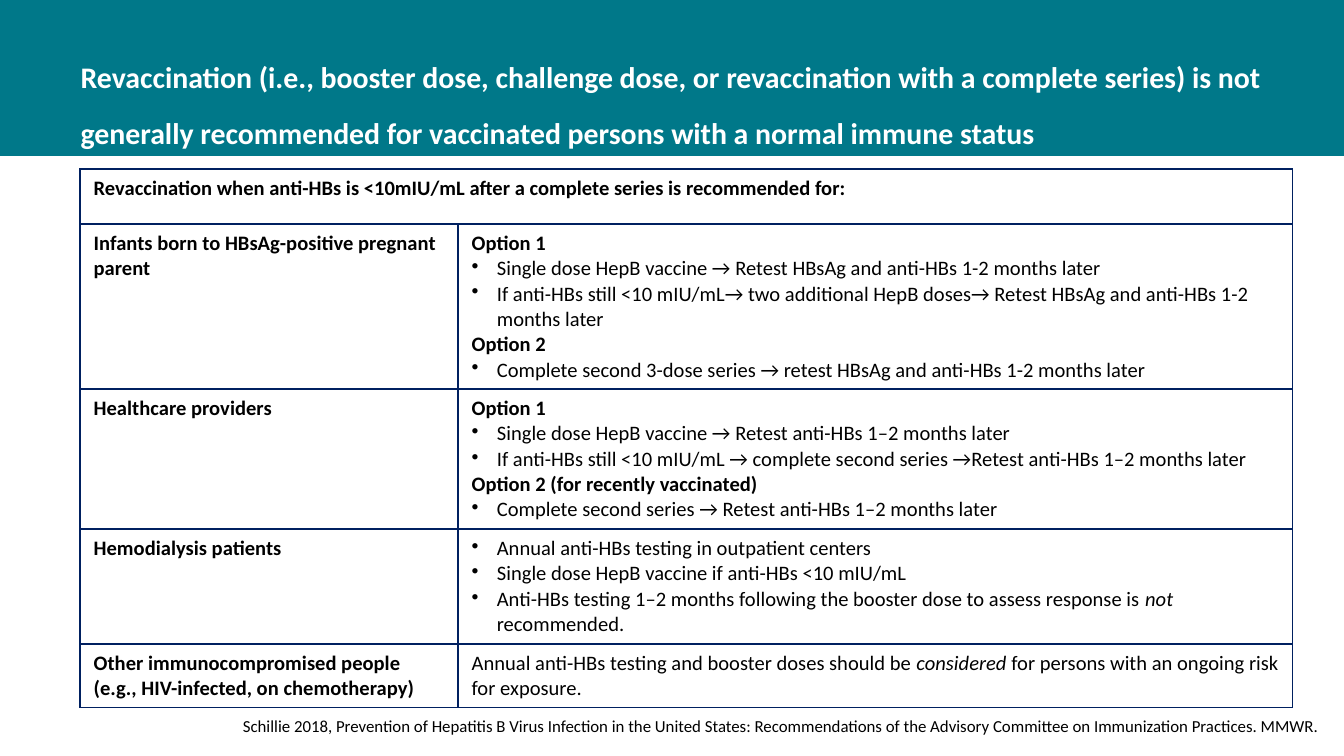
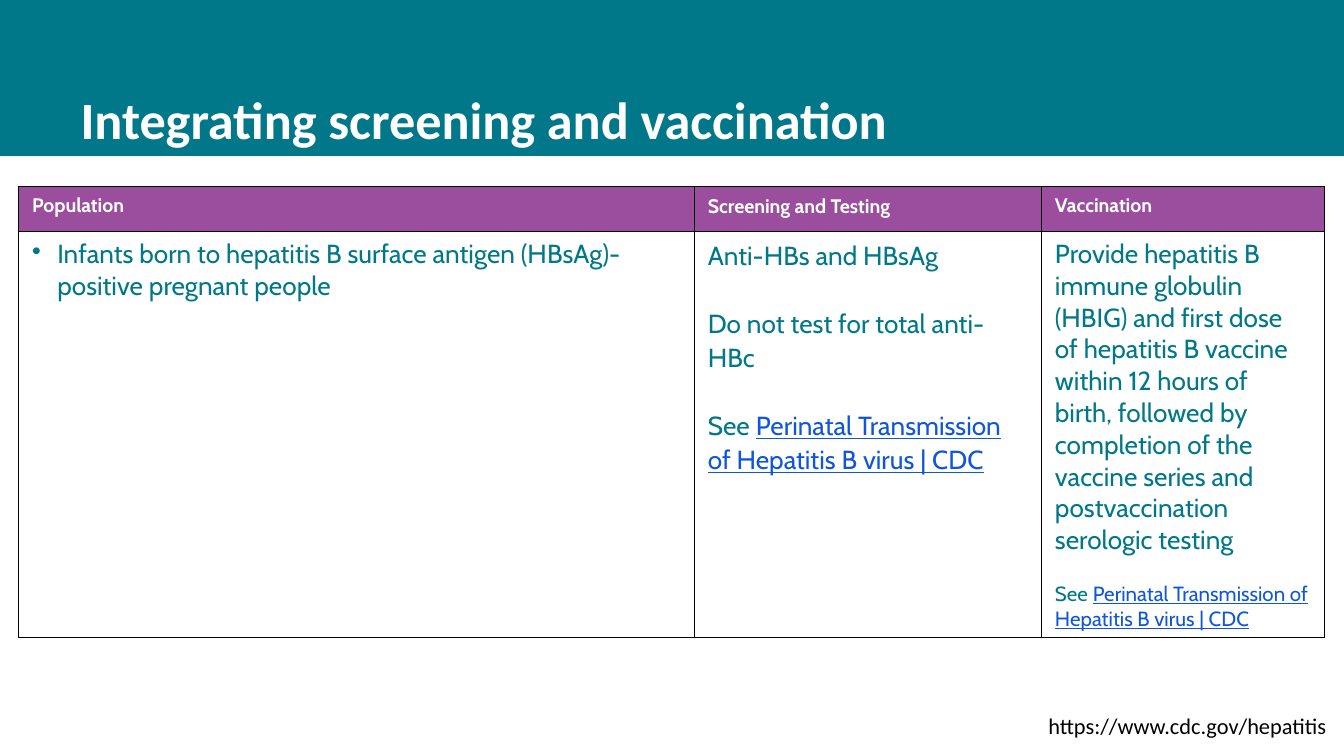
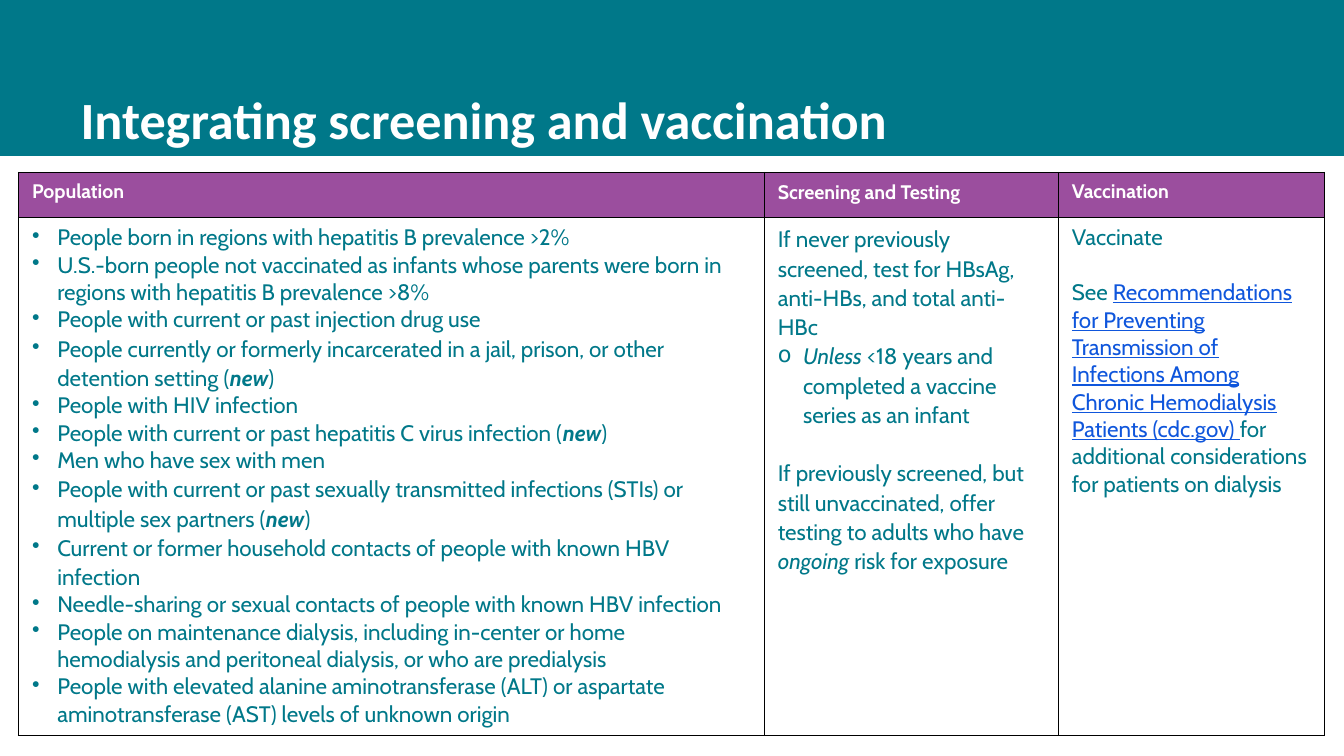
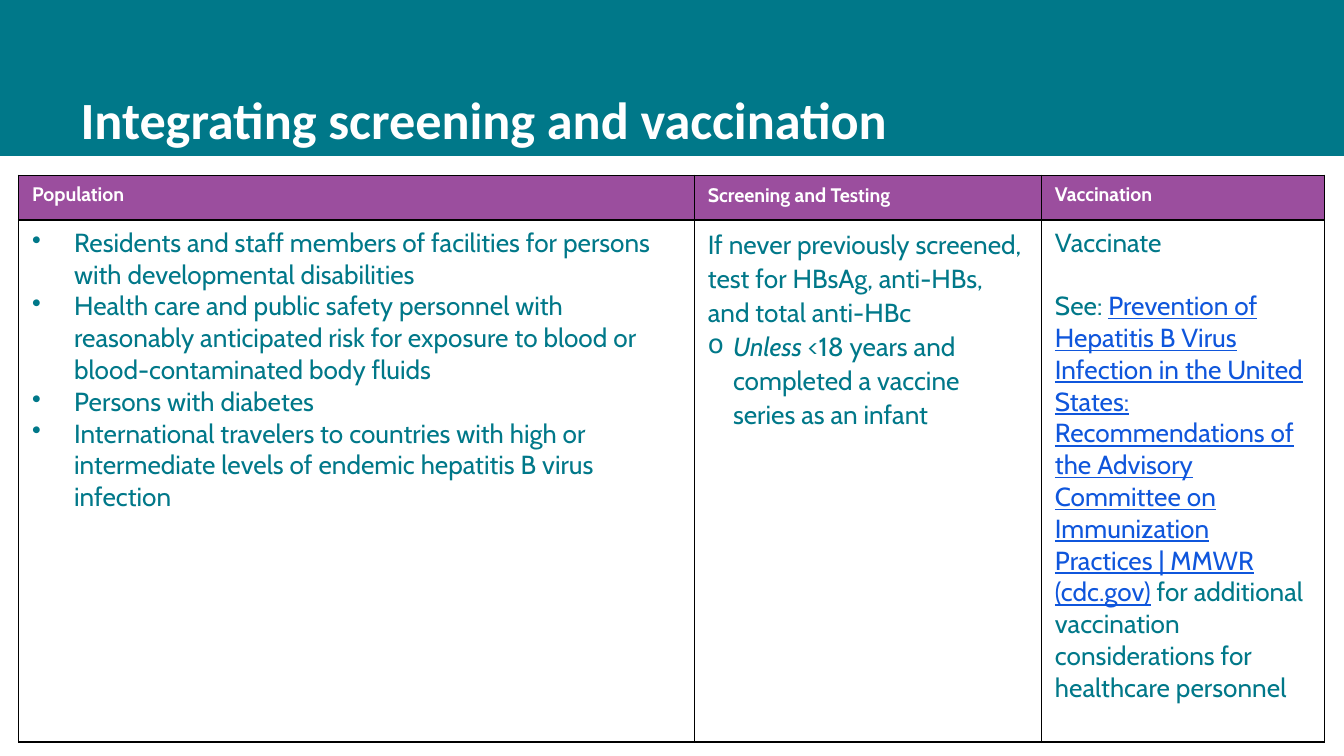
"""Build four slides on hepatitis B revaccination, screening and vaccination."""
import collections

import pptx
import pptx.dml.color
import pptx.enum.shapes
import pptx.enum.text
import pptx.oxml
import pptx.oxml.ns
import pptx.util

Pt = pptx.util.Pt
RGBColor = pptx.dml.color.RGBColor

TEAL = RGBColor(0x00, 0x78, 0x89)
PURPLE = RGBColor(0x9B, 0x4E, 0x9E)
NAVY = RGBColor(0x00, 0x20, 0x60)
LINK_BLUE = RGBColor(0x0F, 0x56, 0xDC)
BLACK = RGBColor(0x00, 0x00, 0x00)
WHITE = RGBColor(0xFF, 0xFF, 0xFF)
NAMESPACE = pptx.oxml.ns.nsdecls("a")
LOOSE = 1.07

Para = collections.namedtuple(
    "Para", "runs bullet spacing gap size indent", defaults=("", None, 0, None, 13.5))


def fill_cell(cell, paras, font, size, color, border, fill=None, bold=False):
    """Write paragraphs into a cell; run styles are b(old), i(talic) and u (link)."""
    properties = cell._tc.get_or_add_tcPr()
    for side in "LRTB":
        properties.append(pptx.oxml.parse_xml(
            f'<a:ln{side} {NAMESPACE} w="12700"><a:solidFill><a:srgbClr val="{border}"/>'
            f'</a:solidFill></a:ln{side}>'))
    if fill is None:
        cell.fill.background()
    else:
        cell.fill.solid()
        cell.fill.fore_color.rgb = fill
    for index, para in enumerate(paras):
        frame = cell.text_frame
        paragraph = frame.paragraphs[0] if index == 0 else frame.add_paragraph()
        if para.bullet:
            layout = paragraph._p.get_or_add_pPr()
            layout.set("marL", str(Pt(para.indent)))
            layout.set("indent", str(-Pt(para.indent)))
            layout.append(pptx.oxml.parse_xml(
                f'<a:buChar {NAMESPACE} char="{para.bullet}"/>'))
        if para.spacing:
            paragraph.line_spacing = para.spacing
        if para.gap:
            paragraph.space_before = Pt(para.gap)
        for piece in para.runs:
            words, style = (piece, "") if isinstance(piece, str) else piece
            run = paragraph.add_run()
            run.text = words
            run.font.name = font
            run.font.size = Pt(para.size or size)
            run.font.bold = bold or "b" in style
            run.font.italic = "i" in style
            run.font.underline = "u" in style
            run.font.color.rgb = LINK_BLUE if "u" in style else color


def add_grid(slide, left, top, widths, heights):
    """Add a plain table with the given column widths and row heights."""
    grid = slide.shapes.add_table(
        len(heights), len(widths), Pt(left), Pt(top), Pt(sum(widths)), Pt(sum(heights))).table
    grid.first_row = grid.horz_banding = False
    for column, width in zip(grid.columns, widths):
        column.width = Pt(width)
    for row, height in zip(grid.rows, heights):
        row.height = Pt(height)
    return grid


deck = pptx.Presentation()
deck.slide_width, deck.slide_height = Pt(720), Pt(405)

INTEGRATING = "Integrating screening and vaccination"
titles = [
    ("Revaccination (i.e., booster dose, challenge dose, or revaccination with a complete series) "
     "is not generally recommended for vaccinated persons with a normal immune status", 16),
    (INTEGRATING, 28), (INTEGRATING, 28), (INTEGRATING, 28),
]
for heading, size in titles:
    slide = deck.slides.add_slide(deck.slide_layouts[5])
    band = slide.shapes.add_shape(
        pptx.enum.shapes.MSO_SHAPE.RECTANGLE, 0, 0, deck.slide_width, Pt(83.5))
    band.shadow.inherit = False
    band.fill.solid()
    band.fill.fore_color.rgb = TEAL
    band.line.fill.background()
    slide.shapes._spTree.insert(2, band._element)
    title = slide.shapes.title
    title.left, title.top, title.width, title.height = Pt(36), Pt(16.5), Pt(648), Pt(67.5)
    title.text_frame.text = heading
    title.text_frame.auto_size = pptx.enum.text.MSO_AUTO_SIZE.NONE
    title.text_frame.vertical_anchor = pptx.enum.text.MSO_ANCHOR.BOTTOM
    paragraph = title.text_frame.paragraphs[0]
    paragraph.alignment = pptx.enum.text.PP_ALIGN.LEFT
    paragraph.line_spacing = Pt(30)
    font = paragraph.runs[0].font
    font.name, font.size, font.bold = "Calibri", Pt(size), True
    font.color.rgb = WHITE

sources = [
    (0, "Schillie 2018, Prevention of Hepatitis B Virus Infection in the United States: "
        "Recommendations of the Advisory Committee on Immunization Practices. MMWR.",
     9, 123, 380, 597, 18),
    (1, "https://www.cdc.gov/hepatitis", 12, 554.5, 378, 165.5, 21.5),
]
for number, words, size, left, top, width, height in sources:
    source = deck.slides[number].shapes.add_textbox(Pt(left), Pt(top), Pt(width), Pt(height))
    source.text_frame.word_wrap = True
    source.text_frame.text = words
    font = source.text_frame.paragraphs[0].runs[0].font
    font.name, font.size = "Calibri", Pt(size)
    font.color.rgb = BLACK

revaccination = [
    ("Infants born to HBsAg-positive pregnant parent", [
        Para([("Option 1", "b")]),
        Para(["Single dose HepB vaccine → Retest HBsAg and anti-HBs 1-2 months later"], "•"),
        Para(["If anti-HBs still <10 mIU/mL→ two additional HepB doses→ "
              "Retest HBsAg and anti-HBs 1-2 months later"], "•"),
        Para([("Option 2", "b")]),
        Para(["Complete second 3-dose series → retest HBsAg and anti-HBs 1-2 months later"], "•"),
    ]),
    ("Healthcare providers", [
        Para([("Option 1", "b")]),
        Para(["Single dose HepB vaccine → Retest anti-HBs 1–2 months later"], "•"),
        Para(["If anti-HBs still <10 mIU/mL → complete second series →"
              "Retest anti-HBs 1–2 months later"], "•"),
        Para([("Option 2 (for recently vaccinated)", "b")]),
        Para(["Complete second series → Retest anti-HBs 1–2 months later"], "•"),
    ]),
    ("Hemodialysis patients", [
        Para(["Annual anti-HBs testing in outpatient centers"], "•"),
        Para(["Single dose HepB vaccine if anti-HBs <10 mIU/mL"], "•"),
        Para(["Anti-HBs testing 1–2 months following the booster dose to assess response is ",
              ("not", "i"), " recommended."], "•"),
    ]),
    ("Other immunocompromised people (e.g., HIV-infected, on chemotherapy)", [
        Para(["Annual anti-HBs testing and booster doses should be ", ("considered", "i"),
              " for persons with an ongoing risk for exposure."]),
    ]),
]
grid = add_grid(deck.slides[0], 43, 90.5, [202.5, 447], [29.5, 88.5, 75, 61.5, 34])
caption = "Revaccination when anti-HBs is <10mIU/mL after a complete series is recommended for:"
fill_cell(grid.cell(0, 0), [Para([caption])], "Calibri", 11, BLACK, NAVY, bold=True)
fill_cell(grid.cell(0, 1), [], "Calibri", 11, BLACK, NAVY)
grid.cell(0, 0).merge(grid.cell(0, 1))
for row, (group, advice) in enumerate(revaccination, start=1):
    fill_cell(grid.cell(row, 0), [Para([group])], "Calibri", 11, BLACK, NAVY, bold=True)
    fill_cell(grid.cell(row, 1), advice, "Calibri", 11, BLACK, NAVY)

never_screened = [
    Para(["If never previously screened, test for HBsAg, anti-HBs, and total anti-HBc"],
         spacing=LOOSE),
    Para([("Unless", "i"), " <18 years and completed a vaccine series as an infant"],
         "o", LOOSE),
]
perinatal = ["See ", ("Perinatal Transmission of Hepatitis B virus | CDC", "u")]
infants = [
    [Para(["Infants born to hepatitis B surface antigen (HBsAg)-positive pregnant people"], "•")],
    [Para(["Anti-HBs and HBsAg"], spacing=LOOSE),
     Para(["Do not test for total anti-HBc"], spacing=LOOSE, gap=18.25),
     Para(perinatal, spacing=LOOSE, gap=18.25)],
    [Para(["Provide hepatitis B immune globulin (HBIG) and first dose of hepatitis B vaccine "
           "within 12 hours of birth, followed by completion of the vaccine series and "
           "postvaccination serologic testing"]),
     Para(perinatal, gap=13.4, size=11)],
]
risk_groups = [
    [Para(["People born in regions with hepatitis B prevalence >2%"], "•"),
     Para(["U.S.-born people not vaccinated as infants whose parents were born in regions "
           "with hepatitis B prevalence >8%"], "•"),
     Para(["People with current or past injection drug use"], "•"),
     Para(["People currently or formerly incarcerated in a jail, prison, or other detention "
           "setting (", ("new", "bi"), ")"], "•", LOOSE),
     Para(["People with HIV infection"], "•"),
     Para(["People with current or past hepatitis C virus infection (", ("new", "bi"), ")"], "•"),
     Para(["Men who have sex with men"], "•"),
     Para(["People with current or past sexually transmitted infections (STIs) or multiple "
           "sex partners (", ("new", "bi"), ")"], "•", LOOSE),
     Para(["Current or former household contacts of people with known HBV infection"],
          "•", LOOSE),
     Para(["Needle-sharing or sexual contacts of people with known HBV infection"], "•"),
     Para(["People on maintenance dialysis, including in-center or home hemodialysis and "
           "peritoneal dialysis, or who are predialysis"], "•"),
     Para(["People with elevated alanine aminotransferase (ALT) or aspartate "
           "aminotransferase (AST) levels of unknown origin"], "•")],
    never_screened + [
        Para(["If previously screened, but still unvaccinated, offer testing to adults who have ",
              ("ongoing", "i"), " risk for exposure"], spacing=LOOSE, gap=15.7)],
    [Para(["Vaccinate"]),
     Para(["See ", ("Recommendations for Preventing Transmission of Infections Among Chronic "
                    "Hemodialysis Patients (cdc.gov) ", "u"),
           "for additional considerations for patients on dialysis"], gap=14.7)],
]
exposed_groups = [
    [Para([words], "•", indent=22.5) for words in (
        "Residents and staff members of facilities for persons with developmental disabilities",
        "Health care and public safety personnel with reasonably anticipated risk for exposure "
        "to blood or blood-contaminated body fluids",
        "Persons with diabetes",
        "International travelers to countries with high or intermediate levels of endemic "
        "hepatitis B virus infection")],
    never_screened,
    [Para(["Vaccinate"]),
     Para(["See: ", ("Prevention of Hepatitis B Virus Infection in the United States: "
                     "Recommendations of the Advisory Committee on Immunization Practices "
                     "| MMWR (cdc.gov)", "u"),
           " for additional vaccination considerations for healthcare personnel"], gap=17)],
]
headers = [Para(["Population"]), Para(["Screening and Testing"], spacing=LOOSE),
           Para(["Vaccination"])]
screening = [
    (1, 100, [362, 186, 151.5], 217.5, 14, infants),
    (2, 92.5, [399.5, 157.5, 142.5], 277.5, 12, risk_groups),
    (3, 94, [362, 186, 151.5], 279.5, 14, exposed_groups),
]
for number, top, widths, body_height, size, contents in screening:
    grid = add_grid(deck.slides[number], 10, top, widths, [24, body_height])
    for column, (header, paras) in enumerate(zip(headers, contents)):
        fill_cell(grid.cell(0, column), [header], "Cabin", 10.5, WHITE, BLACK, PURPLE, True)
        fill_cell(grid.cell(1, column), paras, "Cabin", size, TEAL, BLACK)

deck.save("out.pptx")
